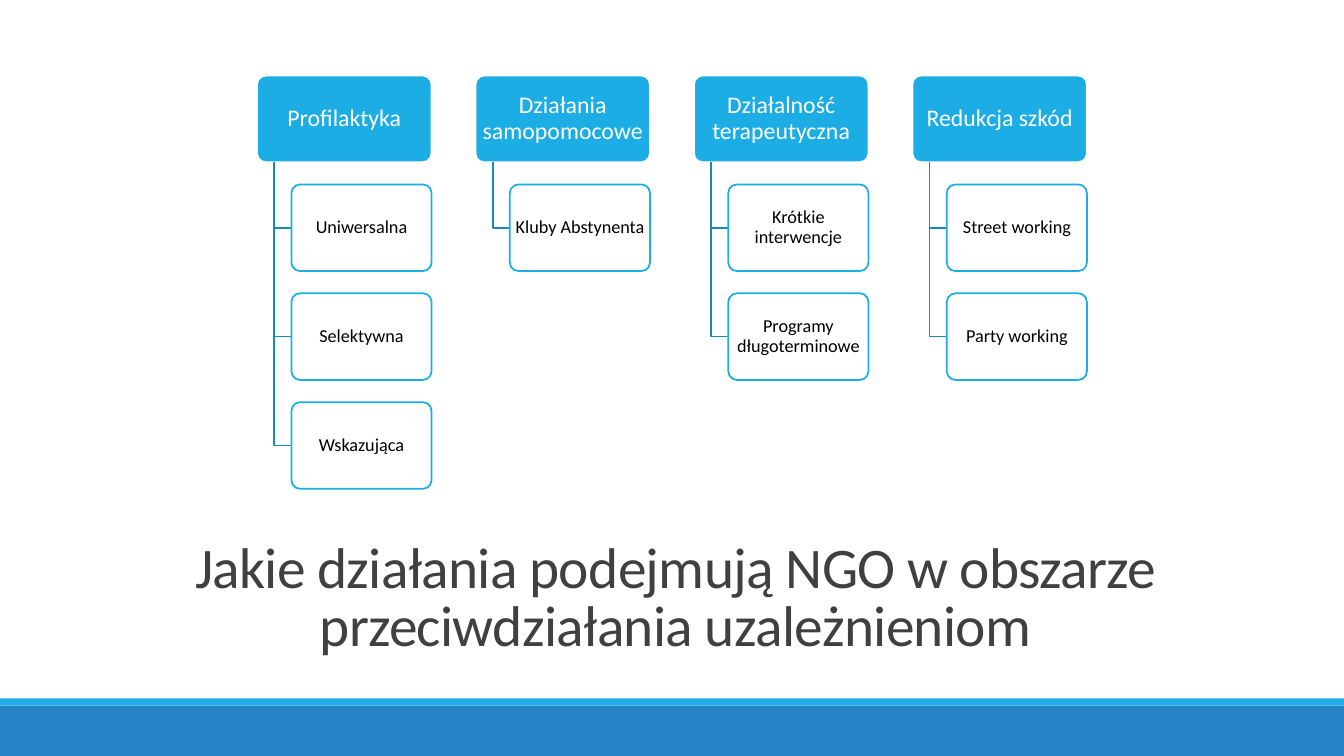
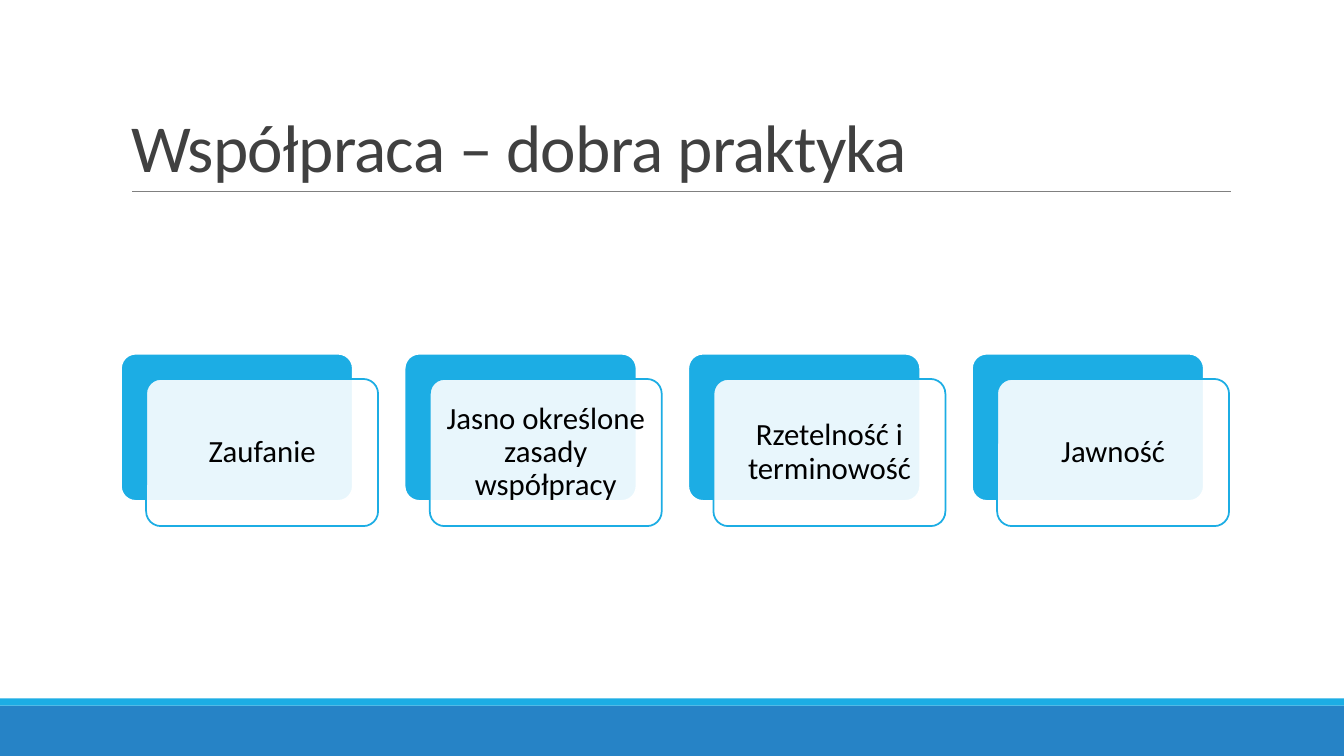
"""Builds two slides on NGO work against addiction: activities and good practice."""
from lxml import etree
from pptx import Presentation
from pptx.dml.color import RGBColor
from pptx.enum.shapes import MSO_CONNECTOR, MSO_SHAPE
from pptx.enum.text import MSO_ANCHOR, MSO_AUTO_SIZE, PP_ALIGN
from pptx.oxml.ns import qn
from pptx.util import Inches, Pt

RECTANGLE = MSO_SHAPE.RECTANGLE
ROUNDED = MSO_SHAPE.ROUNDED_RECTANGLE
STRAIGHT = MSO_CONNECTOR.STRAIGHT
MIDDLE, BOTTOM = MSO_ANCHOR.MIDDLE, MSO_ANCHOR.BOTTOM
CENTER, LEFT = PP_ALIGN.CENTER, PP_ALIGN.LEFT
NO_AUTOFIT = MSO_AUTO_SIZE.NONE


class Theme:
    font = "Calibri"
    white = RGBColor.from_string("FFFFFF")
    black = RGBColor.from_string("000000")
    accent = RGBColor.from_string("1CADE4")
    band = RGBColor.from_string("2683C6")
    branch = RGBColor.from_string("168BB7")
    rule = RGBColor.from_string("808080")
    title = RGBColor.from_string("404040")
    long_title_size, title_size = Pt(41), Pt(48)
    header_size, item_size, value_size = Pt(17), Pt(13), Pt(22)
    outline, hairline = Pt(1.25), Pt(0.5)


def add_box(page, left, top, width, height, text="", size=None, inset=0, filled=False):
    """Add a rounded box, either solid accent or translucent white."""
    box = page.shapes.add_shape(ROUNDED, Inches(left), Inches(top), Inches(width), Inches(height))
    box.adjustments[0] = 0.1
    box.shadow.inherit = False
    box.fill.solid()
    box.fill.fore_color.rgb = Theme.accent if filled else Theme.white
    box.line.color.rgb = Theme.white if filled else Theme.accent
    box.line.width = Theme.outline
    if not filled:
        color = box.element.spPr.find(qn("a:solidFill")).find(qn("a:srgbClr"))
        etree.SubElement(color, qn("a:alpha")).set("val", "90000")
    if text:
        frame = box.text_frame
        frame.word_wrap = True
        frame.vertical_anchor = MIDDLE
        frame.margin_left = frame.margin_right = Inches(inset)
        frame.margin_top = frame.margin_bottom = Inches(0.02)
        para = frame.paragraphs[0]
        para.text = text
        para.alignment = CENTER
        para.line_spacing = 0.9
        para.font.name = Theme.font
        para.font.size = size
        para.font.color.rgb = Theme.white if filled else Theme.black


deck = Presentation()
deck.slide_width, deck.slide_height = Inches(13.33), Inches(7.5)
layout = deck.slide_layouts[5]
for placeholder in list(layout.placeholders)[1:]:
    layout.shapes.element.remove(placeholder.element)

TITLES = [
    ("Jakie działania podejmują NGO w obszarze przeciwdziałania uzależnieniom",
     5.3, 1.3, Theme.long_title_size, CENTER, MIDDLE),
    ("Współpraca – dobra praktyka", 0.31, 1.59, Theme.title_size, LEFT, BOTTOM),
]
pages = []
for text, top, height, size, alignment, anchor in TITLES:
    page = deck.slides.add_slide(layout)
    title = page.shapes.title
    title.left, title.top = Inches(1.2), Inches(top)
    title.width, title.height = Inches(11), Inches(height)
    frame = title.text_frame
    frame.word_wrap = True
    frame.auto_size = NO_AUTOFIT
    frame.vertical_anchor = anchor
    para = frame.paragraphs[0]
    para.text = text
    para.alignment = alignment
    para.line_spacing = 0.85
    para.font.name = Theme.font
    para.font.size = size
    para.font.color.rgb = Theme.title
    for span in title.element.iter(qn("a:r")):
        span.get_or_add_rPr().set("spc", "-50")
    pages.append(page)
activities_page, practice_page = pages

for top, height, color in [(7, 0.5, Theme.band), (6.93, 0.07, Theme.accent)]:
    band = activities_page.shapes.add_shape(
        RECTANGLE, 0, Inches(top), deck.slide_width, Inches(height))
    band.shadow.inherit = False
    band.fill.solid()
    band.fill.fore_color.rgb = color
    band.line.fill.background()
    layout.shapes.element.append(band.element)

ACTIVITIES = {
    "Profilaktyka": ["Uniwersalna", "Selektywna", "Wskazująca"],
    "Działania samopomocowe": ["Kluby Abstynenta"],
    "Działalność terapeutyczna": ["Krótkie interwencje", "Programy długoterminowe"],
    "Redukcja szkód": ["Street working", "Party working"],
}
BOX_HEIGHT = 0.86
HEADER_TOP = 0.75
ROW_PITCH = 1.08
for column, (header, items) in enumerate(ACTIVITIES.items()):
    left = 2.55 + column * 6.5 / 3
    stem_x = Inches(left + 0.17)
    item_left = left + 0.34
    add_box(activities_page, left, HEADER_TOP, 1.73, BOX_HEIGHT, header,
            Theme.header_size, 0.03, filled=True)
    for row, item in enumerate(items, start=1):
        top = HEADER_TOP + row * ROW_PITCH
        middle = Inches(top + BOX_HEIGHT / 2)
        outline = activities_page.shapes.build_freeform(stem_x, Inches(HEADER_TOP + BOX_HEIGHT))
        outline.add_line_segments([(stem_x, middle), (Inches(item_left), middle)], close=False)
        elbow = outline.convert_to_shape()
        elbow.shadow.inherit = False
        elbow.fill.background()
        elbow.line.color.rgb = Theme.branch
        elbow.line.width = Theme.outline
        add_box(activities_page, item_left, top, 1.39, BOX_HEIGHT, item, Theme.item_size, 0.02)

rule = practice_page.shapes.add_connector(
    STRAIGHT, Inches(1.31), Inches(1.9), Inches(12.21), Inches(1.9))
rule.line.color.rgb = Theme.rule
rule.line.width = Theme.hairline
etree.SubElement(rule.element.spPr, qn("a:effectLst"))

VALUES = ["Zaufanie", "Jasno określone zasady współpracy",
          "Rzetelność i terminowość", "Jawność"]
for column, value in enumerate(VALUES):
    left = 1.2 + column * 8.44 / 3
    add_box(practice_page, left, 3.51, 2.3, 1.46, filled=True)
    add_box(practice_page, left + 0.25, 3.76, 2.3, 1.46, value, Theme.value_size, 0.09)

deck.save("out.pptx")
